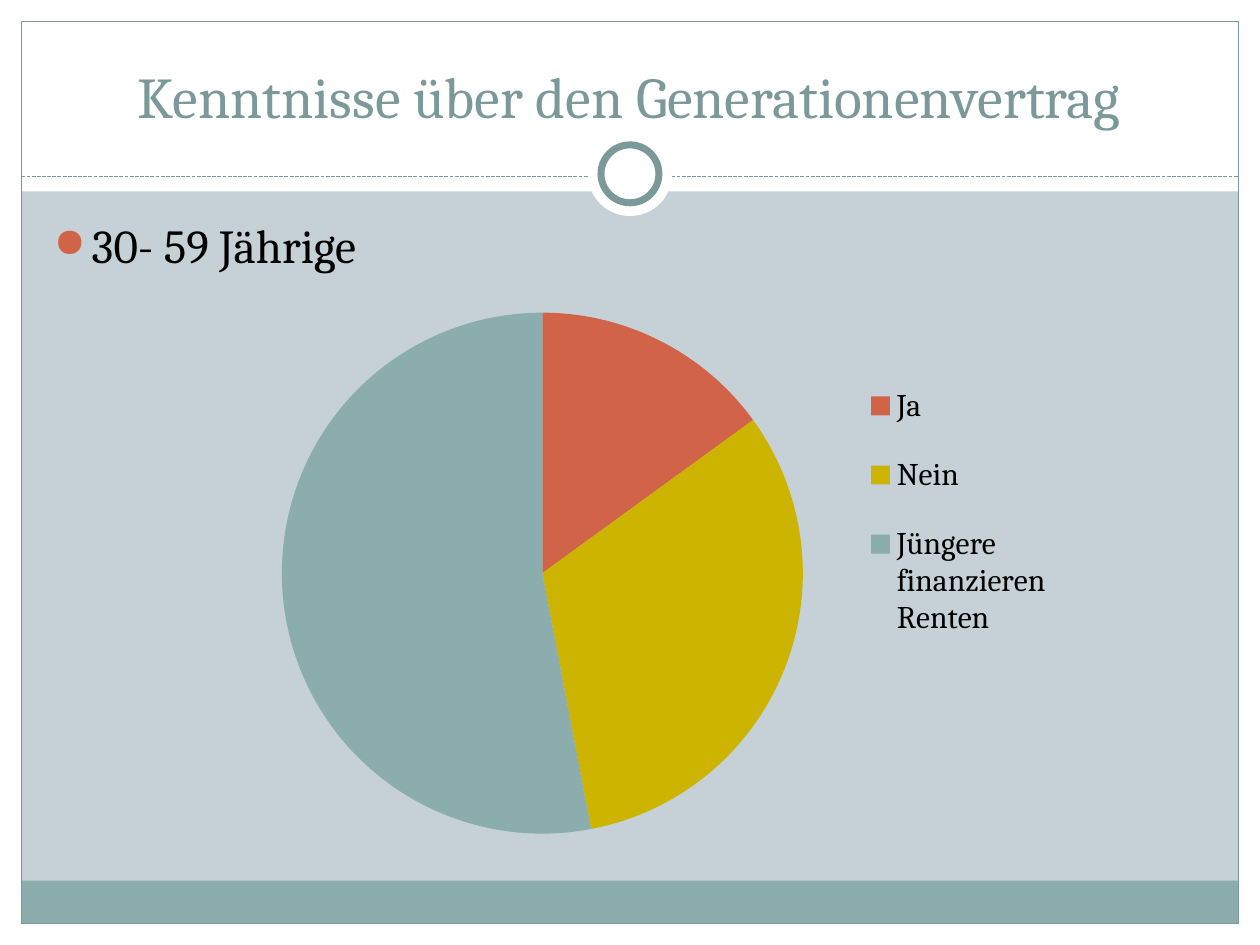
import pptx
import pptx.chart.data
import pptx.dml.color
import pptx.enum.chart
import pptx.enum.dml
import pptx.enum.shapes
import pptx.enum.text
import pptx.oxml
import pptx.oxml.ns
import pptx.util
from pptx.util import Inches

RGB = pptx.dml.color.RGBColor
WHITE = RGB(0xFF, 0xFF, 0xFF)
BLACK = RGB(0, 0, 0)
PALE = RGB(0xC5, 0xD1, 0xD7)
TEAL = RGB(0x8C, 0xAD, 0xAE)
SLATE = RGB(0x7C, 0x99, 0x9A)
RED = RGB(0xD1, 0x63, 0x49)
GOLD = RGB(0xCC, 0xB4, 0x00)

KIND = pptx.enum.shapes.MSO_SHAPE
ANCHOR = pptx.enum.text.MSO_ANCHOR
FONT = "Cambria"
EDGE = 0.17
SLICES = [("Ja", 15, RED), ("Nein", 32, GOLD),
          ("Jüngere finanzieren Renten", 53, TEAL)]


def style(font, size, color):
    look = {"name": FONT, "size": pptx.util.Pt(size)}
    for key, value in look.items():
        setattr(font, key, value)
    font.color.rgb = color


def place(shape, box):
    for key, value in zip(("left", "top", "width", "height"), box):
        setattr(shape, key, Inches(value))


def clear(frame, anchor):
    look = {"margin_left": Inches(0.1), "margin_right": Inches(0.1),
            "margin_top": Inches(0.05), "margin_bottom": Inches(0.05),
            "word_wrap": True, "vertical_anchor": anchor,
            "auto_size": pptx.enum.text.MSO_AUTO_SIZE.NONE}
    for key, value in look.items():
        setattr(frame, key, value)


def add_form(slide, kind, box, fill=None, width=0):
    form = slide.shapes.add_shape(kind, *map(Inches, box))
    form.shadow.inherit = False
    if fill is None:
        form.fill.background()
    else:
        form.fill.solid()
        form.fill.fore_color.rgb = fill
    if width:
        form.line.color.rgb = SLATE
        form.line.width = pptx.util.Pt(width)
    else:
        form.line.fill.background()


def add_frame(slide, box):
    left, top, wide, high = box
    inner = wide - 2 * EDGE
    # White margins and the coloured foot
    for part, fill in [
        ((left, top + high - EDGE, wide, EDGE), WHITE),
        ((left, top, wide, 1.52), WHITE),
        ((left, top, EDGE, high), WHITE),
        ((left + wide - EDGE, top, EDGE, high), WHITE),
        ((left + EDGE, top + 6.99, inner, 0.34), TEAL),
    ]:
        add_form(slide, KIND.RECTANGLE, part, fill)
    add_form(slide, KIND.RECTANGLE,
             (left + EDGE, top + EDGE, inner, high - 2 * EDGE), width=0.75)

    # Dashed rule under the title
    rule = slide.shapes.add_connector(
        pptx.enum.shapes.MSO_CONNECTOR.STRAIGHT,
        Inches(left + EDGE), Inches(top + 1.4),
        Inches(left + wide - EDGE), Inches(top + 1.4))
    rule.line.color.rgb = SLATE
    rule.line.width = pptx.util.Pt(0.75)
    rule.line.dash_style = pptx.enum.dml.MSO_LINE.SQUARE_DOT
    props = rule.element.spPr
    props.append(props.makeelement(pptx.oxml.ns.qn("a:effectLst"), {}))

    # Ring centred on the rule
    for size, width in ((0.67, 0), (0.46, 4)):
        ring = (left + (wide - size) / 2, top + 1.38 - size / 2, size, size)
        add_form(slide, KIND.OVAL, ring, WHITE, width)


def add_title(slide, box, text):
    title = slide.shapes.title
    slide.shapes.element.append(title.element)  # in front of the frame
    place(title, box)
    title.text = text
    clear(title.text_frame, ANCHOR.BOTTOM)
    para = title.text_frame.paragraphs[0]
    para.alignment = pptx.enum.text.PP_ALIGN.CENTER
    style(para.runs[0].font, 33, SLATE)


def add_body(slide, box, text):
    body = slide.shapes.add_textbox(*map(Inches, box))
    clear(body.text_frame, ANCHOR.TOP)
    para = body.text_frame.paragraphs[0]
    para.text = text
    para.space_before = pptx.util.Pt(5.4)
    style(para.runs[0].font, 27, BLACK)
    # Bullet
    props = para._p.get_or_add_pPr()
    props.set("marL", str(Inches(0.3)))
    props.set("indent", str(-Inches(0.3)))
    space = pptx.oxml.ns.nsdecls("a")
    for mark in (f'<a:buClr {space}><a:srgbClr val="{RED}"/></a:buClr>',
                 f'<a:buSzPct {space} val="85000"/>',
                 f'<a:buChar {space} char="●"/>'):
        props.append(pptx.oxml.parse_xml(mark))


def set_layout(node, after, box, inner=False):
    """Fix a chart part at fractions of the chart area."""
    for old in node.findall(pptx.oxml.ns.qn("c:layout")):
        node.remove(old)
    target = '<c:layoutTarget val="inner"/>' if inner else ""
    modes = '<c:xMode val="edge"/><c:yMode val="edge"/>'
    sizes = "".join(f'<c:{key} val="{value}"/>'
                    for key, value in zip("xywh", box))
    layout = pptx.oxml.parse_xml(
        f'<c:layout {pptx.oxml.ns.nsdecls("c")}><c:manualLayout>'
        f'{target}{modes}{sizes}</c:manualLayout></c:layout>')
    node.insert(after, layout)


def add_pie(slide, box):
    data = pptx.chart.data.CategoryChartData()
    data.categories = [name for name, _, _ in SLICES]
    data.add_series("Series 1", [value for _, value, _ in SLICES])
    chart = slide.shapes.add_chart(
        pptx.enum.chart.XL_CHART_TYPE.PIE, *map(Inches, box), data).chart
    chart.has_title = False
    style(chart.font, 18, BLACK)
    plot = chart.plots[0]
    plot.vary_by_categories = True
    for index, (_, _, color) in enumerate(SLICES):
        fill = plot.series[0].points[index].format.fill
        fill.solid()
        fill.fore_color.rgb = color

    # Legend and plot positions
    chart.has_legend = True
    legend = chart.legend
    legend.position = pptx.enum.chart.XL_LEGEND_POSITION.RIGHT
    legend.include_in_layout = False
    set_layout(legend._element, 1, (0.75, 0.11, 0.25, 0.56))
    area = chart._chartSpace.chart.plotArea
    set_layout(area, 0, (0.07, 0.03, 0.62, 0.94), inner=True)


def main():
    deck = pptx.Presentation()
    deck.slide_width, deck.slide_height = Inches(10), Inches(7.5)
    slide = deck.slides.add_slide(deck.slide_layouts[5])
    slide.background.fill.solid()
    slide.background.fill.fore_color.rgb = PALE
    add_frame(slide, (0, 0, 10, 7.5))
    add_title(slide, (0.33, 0.25, 9.33, 0.83),
              "Kenntnisse über den Generationenvertrag")
    add_body(slide, (0.33, 1.67, 9.3, 5), "30- 59 Jährige")
    add_pie(slide, (1.77, 2.33, 6.67, 4.44))
    deck.save("out.pptx")


if __name__ == "__main__":
    main()
